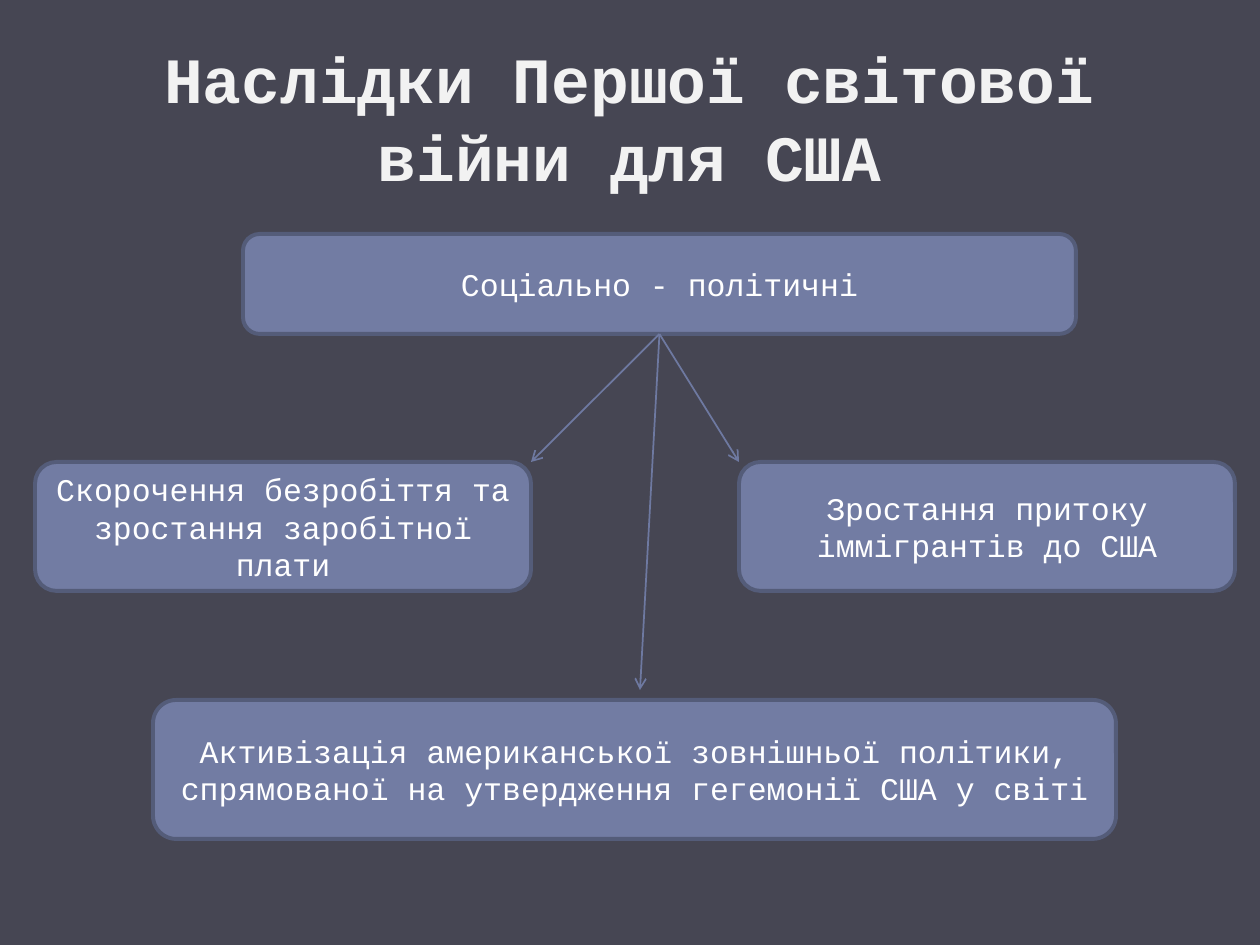
import dataclasses

import pptx
import pptx.dml.color
import pptx.enum.shapes
import pptx.enum.text
import pptx.oxml
import pptx.oxml.ns
import pptx.util

EMU_PER_PX = 914400 / 126


@dataclasses.dataclass(frozen=True)
class Theme:
    background: str = "464653"
    title_text: str = "F2F2F2"
    box_text: str = "FFFFFF"
    box_fill: str = "727CA3"
    box_line: str = "545C79"
    arrow: str = "6E79A1"
    font: str = "Courier New"
    title_size: float = 36.9
    box_size: float = 18
    box_line_width: float = 2.25
    arrow_width: float = 1


THEME = Theme()


def px(*lengths):
    return [pptx.util.Emu(round(length * EMU_PER_PX)) for length in lengths]


def rgb(value):
    return pptx.dml.color.RGBColor.from_string(value)


def write_text(shape, text, size, color, bold=False):
    frame = shape.text_frame
    frame.word_wrap = True
    frame.vertical_anchor = pptx.enum.text.MSO_ANCHOR.MIDDLE
    paragraph = frame.paragraphs[0]
    paragraph.alignment = pptx.enum.text.PP_ALIGN.CENTER
    run = paragraph.add_run()
    run.text = text
    run.font.name = THEME.font
    run.font.size = pptx.util.Pt(size)
    run.font.bold = bold
    run.font.color.rgb = rgb(color)


def add_title(slide, box, text):
    shape = slide.shapes.add_textbox(*px(*box))
    write_text(shape, text, THEME.title_size, THEME.title_text, bold=True)


def add_box(slide, box, text):
    shape = slide.shapes.add_shape(
        pptx.enum.shapes.MSO_SHAPE.ROUNDED_RECTANGLE, *px(*box))
    shape.shadow.inherit = False
    shape.fill.solid()
    shape.fill.fore_color.rgb = rgb(THEME.box_fill)
    shape.line.color.rgb = rgb(THEME.box_line)
    shape.line.width = pptx.util.Pt(THEME.box_line_width)
    write_text(shape, text, THEME.box_size, THEME.box_text)


def add_arrow(slide, start, end):
    connector = slide.shapes.add_connector(
        pptx.enum.shapes.MSO_CONNECTOR.STRAIGHT, *px(*start, *end))
    connector.line.color.rgb = rgb(THEME.arrow)
    connector.line.width = pptx.util.Pt(THEME.arrow_width)
    # Open arrowhead at the end, and no shadow
    qn = pptx.oxml.ns.qn
    properties = connector.line._get_or_add_ln()
    properties.append(properties.makeelement(qn("a:tailEnd"), {"type": "arrow"}))
    shape_properties = connector._element.spPr
    shape_properties.append(shape_properties.makeelement(qn("a:effectLst"), {}))


def add_consequences(slide, box):
    left, top, width, height = box
    row_top, side_width, side_height = top + 228, 496, 129
    right_left = left + width - side_width
    hub = (left + 208, top, 833, 100)
    bottom_box = (left + 118, top + height - 139, 963, 139)

    # Heading box and its three consequences
    add_box(slide, hub, "Соціально - політичні")
    add_box(slide, (left, row_top, side_width, side_height),
            "Скорочення безробіття та зростання заробітної плати")
    add_box(slide, (right_left, row_top, side_width, side_height),
            "Зростання притоку іммігрантів до США")
    add_box(slide, bottom_box,
            "Активізація американської зовнішньої політики, "
            "спрямованої на утвердження гегемонії США у світі")

    # Arrows fan out from the middle of the heading's lower edge
    start = (hub[0] + hub[2] / 2, hub[1] + hub[3])
    ends = [(left + side_width, row_top), (right_left, row_top),
            (left + 605, bottom_box[1] - 10)]
    for end in ends:
        add_arrow(slide, start, end)


def main():
    presentation = pptx.Presentation()
    presentation.slide_width, presentation.slide_height = px(1260, 945)
    slide = presentation.slides.add_slide(presentation.slide_layouts[6])
    slide.background.fill.solid()
    slide.background.fill.fore_color.rgb = rgb(THEME.background)

    add_title(slide, (63, 38, 1134, 157), "Наслідки Першої світової війни для США")
    add_consequences(slide, (35, 234, 1200, 605))
    presentation.save("out.pptx")


if __name__ == "__main__":
    main()
